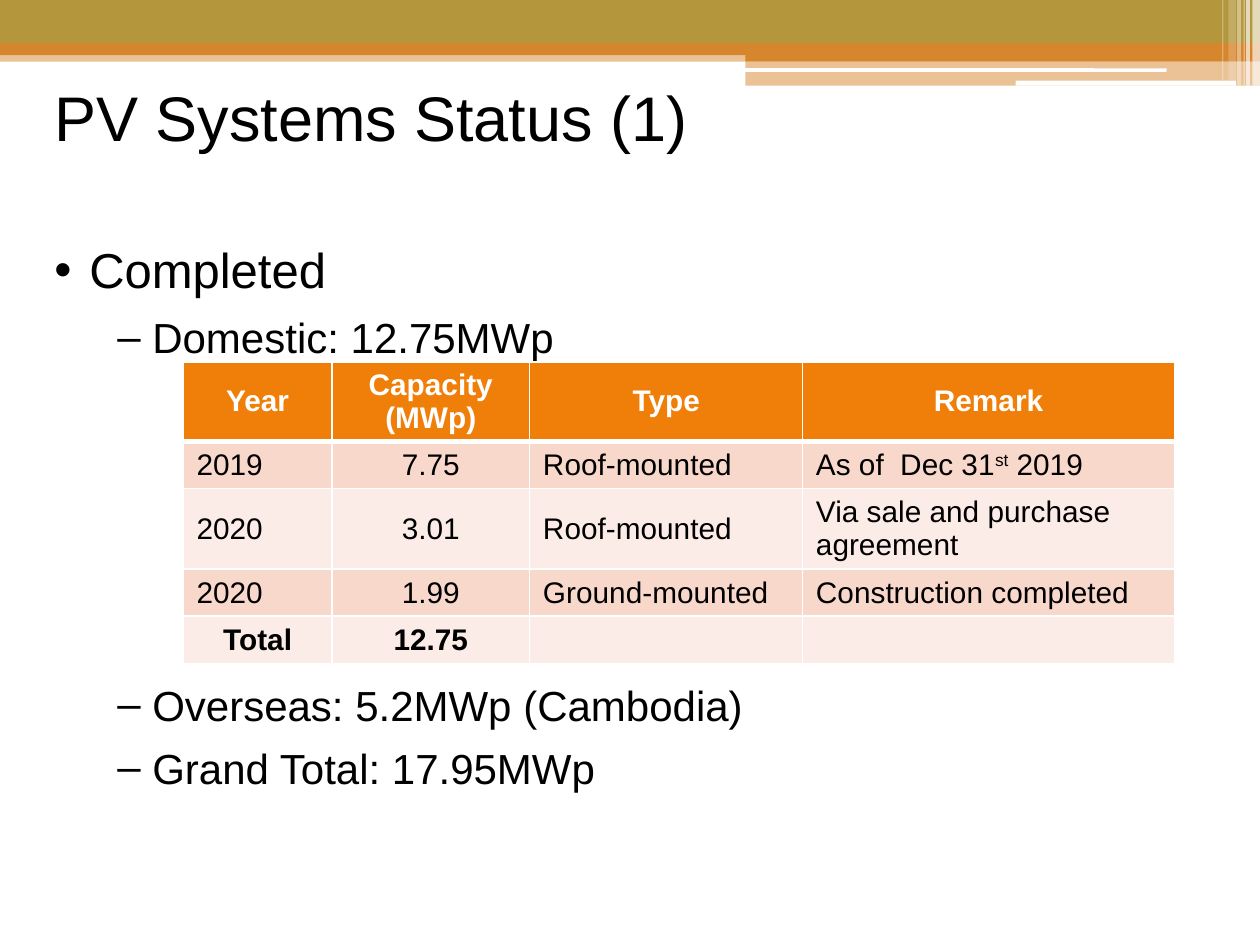
from lxml import etree
from pptx import Presentation
from pptx.dml.color import RGBColor
from pptx.enum.shapes import MSO_SHAPE
from pptx.enum.text import MSO_ANCHOR, MSO_AUTO_SIZE, PP_ALIGN
from pptx.oxml.ns import qn
from pptx.util import Pt

RECT, ROUND = MSO_SHAPE.RECTANGLE, MSO_SHAPE.ROUNDED_RECTANGLE
LEFT, CENTER = PP_ALIGN.LEFT, PP_ALIGN.CENTER
TOP, MIDDLE = MSO_ANCHOR.TOP, MSO_ANCHOR.MIDDLE
NO_AUTOFIT = MSO_AUTO_SIZE.NONE

FONT = "Arial"
BLACK = RGBColor(0x00, 0x00, 0x00)
WHITE = RGBColor(0xFF, 0xFF, 0xFF)
OLIVE = RGBColor(0xB4, 0x96, 0x3C)
AMBER = RGBColor(0xD6, 0x86, 0x2D)
HEADER_FILL = RGBColor(0xF0, 0x7F, 0x09)
ROW_FILLS = [RGBColor(0xF9, 0xD8, 0xCC), RGBColor(0xFC, 0xEC, 0xE7)]

TITLE = "PV Systems Status (1)"

# text, bullet, size, left indent, space before
# (the wide gap before Overseas leaves room for the table)
BULLETS = [
    ("Completed", "•", 28, 20, 0),
    ("Domestic: 12.75MWp", "–", 24, 56, 5.8),
    ("Overseas: 5.2MWp (Cambodia)", "–", 24, 56, 180),
    ("Grand Total: 17.95MWp", "–", 24, 56, 5.8),
]
HANGING = 20

HEADER = ["Year", "Capacity\n(MWp)", "Type", "Remark"]
SYSTEMS = [
    ["2019", "7.75", "Roof-mounted", ("As of  Dec 31", "st", " 2019")],
    ["2020", "3.01", "Roof-mounted", "Via sale and purchase agreement"],
    ["2020", "1.99", "Ground-mounted", "Construction completed"],
]
TOTAL = ["Total", "12.75", "", ""]
COLUMN_WIDTHS = [85, 113, 156, 212.5]
ROW_HEIGHTS = [45, 27, 46, 27, 27]
CAPACITY_COLUMN = 1

# shape, left, top, width, height, colour, opacity in percent
BANNER = [
    (RECT, 0, 28.8, 720, 6.5, AMBER, 50),
    (RECT, 0, 0, 720, 24.5, OLIVE, 100),
    (RECT, 0, 24.5, 720, 7, AMBER, 100),
    (RECT, 426, 28, 294, 7, AMBER, 100),
    (RECT, 426, 34.6, 294, 14.4, AMBER, 50),
    (ROUND, 425.5, 39, 241.2, 2, WHITE, 100),
    (ROUND, 580.3, 46.1, 126, 2.9, WHITE, 100),
]
# left, width, height, opacity of the white stripes at the right edge
STRIPES = [
    (715.7, 4.3, 49, 65),
    (712.1, 2.2, 49, 65),
    (710.6, 0.7, 49, 60),
    (707, 2.2, 49, 40),
    (702, 4.3, 46, 20),
    (698.4, 0.7, 46, 30),
]


def add_band(slide, kind, left, top, width, height, color, opacity):
    band = slide.shapes.add_shape(kind, Pt(left), Pt(top), Pt(width), Pt(height))
    band.shadow.inherit = False
    band.line.fill.background()
    band.fill.solid()
    band.fill.fore_color.rgb = color
    if opacity < 100:
        srgb = band.fill._xPr.find(qn("a:solidFill"))[0]
        etree.SubElement(srgb, qn("a:alpha"), val=str(opacity * 1000))


def style(paragraph, size, color=BLACK, bold=False, align=LEFT):
    paragraph.alignment = align
    font = paragraph.font
    font.name, font.size, font.bold = FONT, Pt(size), bold
    font.color.rgb = color


def prepare_frame(frame):
    frame.margin_left = frame.margin_top = 0
    frame.margin_right = frame.margin_bottom = 0
    frame.word_wrap = True
    frame.auto_size = NO_AUTOFIT
    frame.vertical_anchor = TOP


def add_title(slide):
    title = slide.shapes.title
    title.left, title.top, title.width, title.height = Pt(31), Pt(44.6), Pt(658), Pt(72)
    prepare_frame(title.text_frame)
    title.text_frame.text = TITLE
    style(title.text_frame.paragraphs[0], 36)


def add_bullets(slide):
    frame = slide.shapes.add_textbox(Pt(31), Pt(135.4), Pt(658), Pt(345)).text_frame
    prepare_frame(frame)
    for i, (text, bullet, size, indent, before) in enumerate(BULLETS):
        paragraph = frame.add_paragraph() if i else frame.paragraphs[0]
        paragraph.text = text
        paragraph.line_spacing = 1.05
        paragraph.space_before = Pt(before)
        properties = paragraph._p.get_or_add_pPr()
        properties.set("marL", str(Pt(indent)))
        properties.set("indent", str(-Pt(HANGING)))
        etree.SubElement(properties, qn("a:buFont"), typeface=FONT)
        etree.SubElement(properties, qn("a:buChar"), char=bullet)
        style(paragraph, size)


def add_borders(cell, top, bottom):
    """Draw white cell borders; top and bottom are widths in points."""
    properties = cell._tc.get_or_add_tcPr()
    for side, width in (("lnL", 1), ("lnR", 1), ("lnT", top), ("lnB", bottom)):
        line = etree.SubElement(properties, qn("a:" + side), w=str(Pt(width)))
        fill = etree.SubElement(line, qn("a:solidFill"))
        etree.SubElement(fill, qn("a:srgbClr"), val=str(WHITE))


def fill_text(cell, content):
    """Write a string, or a (text, superscript, text) tuple."""
    if isinstance(content, str):
        cell.text = content
        return
    paragraph = cell.text_frame.paragraphs[0]
    for text in content:
        paragraph.add_run().text = text
    paragraph.runs[1].font._element.set("baseline", "30000")


def add_systems_table(slide):
    rows = [HEADER, *SYSTEMS, TOTAL]
    table = slide.shapes.add_table(
        len(rows), len(HEADER), Pt(104.7), Pt(206.8),
        Pt(sum(COLUMN_WIDTHS)), Pt(sum(ROW_HEIGHTS))).table
    for column, width in zip(table.columns, COLUMN_WIDTHS):
        column.width = Pt(width)
    for r, (row, height) in enumerate(zip(rows, ROW_HEIGHTS)):
        table.rows[r].height = Pt(height)
        is_header, is_total = row is HEADER, row is TOTAL
        for c, content in enumerate(row):
            cell = table.cell(r, c)
            cell.vertical_anchor = MIDDLE
            cell.margin_left = cell.margin_right = Pt(7.6)
            add_borders(cell, 3 if r == 1 else 1, 3 if is_header else 1)
            cell.fill.solid()
            cell.fill.fore_color.rgb = HEADER_FILL if is_header else ROW_FILLS[(r - 1) % 2]
            fill_text(cell, content)
            centered = is_header or is_total or c == CAPACITY_COLUMN
            for paragraph in cell.text_frame.paragraphs:
                style(paragraph, 17, WHITE if is_header else BLACK,
                      is_header or is_total, CENTER if centered else LEFT)


def main():
    deck = Presentation()
    deck.slide_width, deck.slide_height = Pt(720), Pt(540)
    slide = deck.slides.add_slide(deck.slide_layouts[5])
    for band in BANNER:
        add_band(slide, *band)
    for left, width, height, opacity in STRIPES:
        add_band(slide, RECT, left, 0, width, height, WHITE, opacity)
    add_title(slide)
    add_bullets(slide)
    add_systems_table(slide)
    deck.save("out.pptx")


if __name__ == "__main__":
    main()
